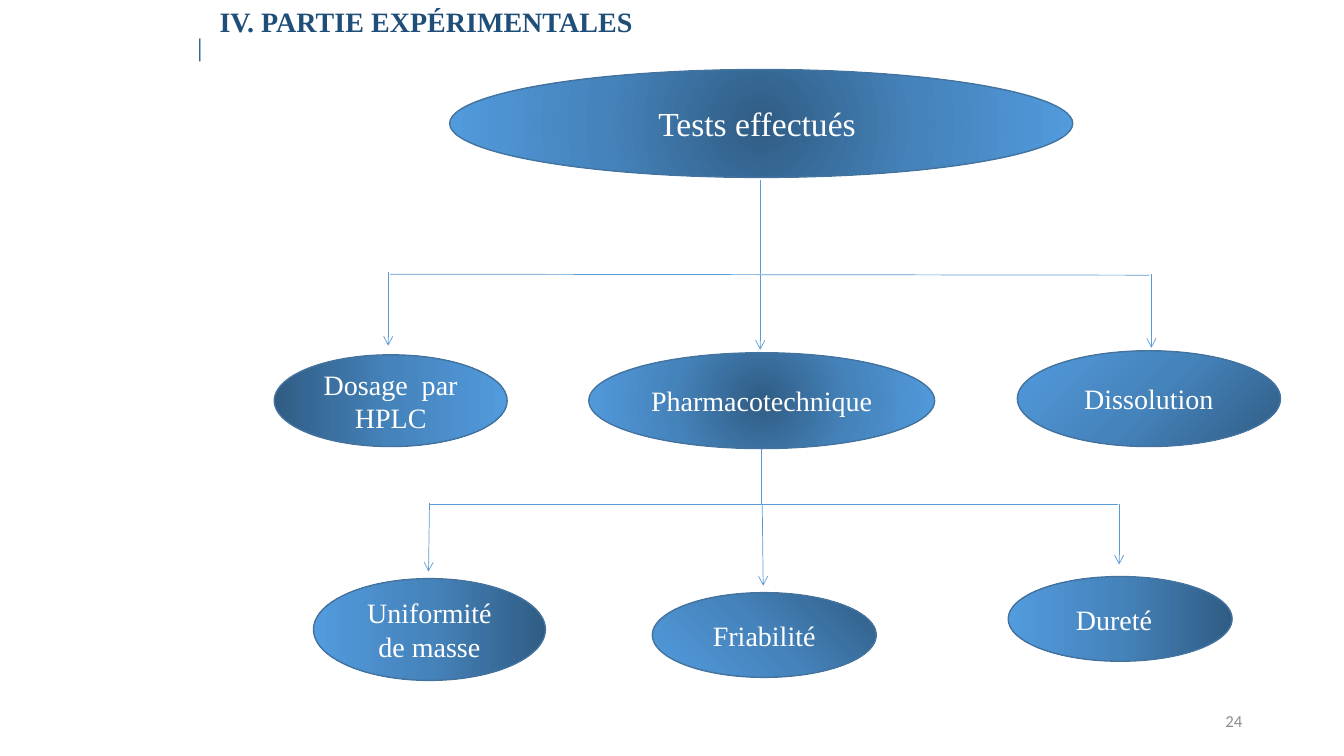
"""Build the tree of tests carried out in the experimental part."""
from pptx import Presentation
from pptx.dml.color import RGBColor
from pptx.enum.shapes import MSO_CONNECTOR, MSO_SHAPE
from pptx.enum.text import MSO_ANCHOR, PP_ALIGN
from pptx.oxml import parse_xml
from pptx.oxml.ns import nsdecls, qn
from pptx.util import Inches, Pt

OVAL = MSO_SHAPE.OVAL
STRAIGHT = MSO_CONNECTOR.STRAIGHT
MIDDLE = MSO_ANCHOR.MIDDLE
LEFT, CENTER, RIGHT = PP_ALIGN.LEFT, PP_ALIGN.CENTER, PP_ALIGN.RIGHT
NAVY = RGBColor(0x1F, 0x4E, 0x79)
GREY = RGBColor(0x8C, 0x8C, 0x8C)
WHITE = RGBColor(0xFF, 0xFF, 0xFF)
OUTLINE = RGBColor(0x43, 0x73, 0x9E)
BRANCH = RGBColor(0x5B, 0x9B, 0xD5)
SERIF = "Times New Roman"
STOPS = ((0, "305C84"), (50, "4583BB"), (100, "529BDE"))

FROM_LEFT = '<a:lin ang="0" scaled="0"/>'
FROM_RIGHT = '<a:lin ang="10800000" scaled="0"/>'
RADIAL = '<a:path path="circle"><a:fillToRect l="{}" t="{}" r="{}" b="{}"/></a:path>'
FROM_CENTER = RADIAL.format(50000, 50000, 50000, 50000)
FROM_BOTTOM_RIGHT = RADIAL.format(100000, 100000, 0, 0)
FROM_TOP_RIGHT = RADIAL.format(100000, 0, 0, 100000)


def write(shape, text, size, color, align, font=SERIF, bold=False):
    shape.text_frame.word_wrap = True
    para = shape.text_frame.paragraphs[0]
    para.text = text
    para.alignment = align
    para.font.name = font
    para.font.size = Pt(size)
    para.font.bold = bold
    para.font.color.rgb = color


def shade(shape, direction):
    shape.fill.gradient()
    stops = "".join(
        f'<a:gs pos="{position * 1000}"><a:srgbClr val="{color}"/></a:gs>'
        for position, color in STOPS
    )
    gradient = parse_xml(
        f'<a:gradFill {nsdecls("a")} rotWithShape="1">'
        f"<a:gsLst>{stops}</a:gsLst>{direction}</a:gradFill>"
    )
    properties = shape._element.spPr
    properties.replace(properties.find(qn("a:gradFill")), gradient)


deck = Presentation()
deck.slide_width = Inches(13.33)
deck.slide_height = Inches(7.5)
page = deck.slides.add_slide(deck.slide_layouts[6])

title = page.shapes.add_textbox(Inches(2.08), Inches(0), Inches(10.5), Inches(0.43))
write(title, "IV. PARTIE EXPÉRIMENTALES", 20, NAVY, LEFT, bold=True)

number = page.shapes.add_textbox(Inches(9.42), Inches(6.95), Inches(3), Inches(0.4))
number.text_frame.vertical_anchor = MIDDLE
write(number, "24", 12, GREY, RIGHT, font="Calibri")

bar = page.shapes.add_textbox(Inches(1.86), Inches(0.26), Inches(0.23), Inches(0.4))
write(bar, "|", 18, NAVY, LEFT)

tests = [
    ("Tests effectués", 24, 4.46, 0.69, 6.18, 1.07, FROM_CENTER, 0.18),
    ("Dosage  par HPLC", 20, 2.72, 3.52, 2.31, 0.91, FROM_LEFT, 0.1),
    ("Pharmacotechnique", 20, 5.84, 3.5, 3.43, 0.95, FROM_CENTER, 0.1),
    ("Dissolution", 20, 10.09, 3.48, 2.61, 0.95, FROM_BOTTOM_RIGHT, 0.1),
    ("Uniformité de masse", 20, 3.11, 5.74, 2.3, 1.01, FROM_RIGHT, 0.1),
    ("Friabilité", 20, 6.47, 5.88, 2.22, 0.84, FROM_TOP_RIGHT, 0.1),
    ("Dureté", 20, 10, 5.72, 2.22, 0.84, FROM_RIGHT, 0.22),
]
for name, size, left, top, width, height, direction, right_inset in tests:
    oval = page.shapes.add_shape(
        OVAL, Inches(left), Inches(top), Inches(width), Inches(height)
    )
    oval.shadow.inherit = False
    shade(oval, direction)
    oval.line.color.rgb = OUTLINE
    oval.line.width = Pt(1)
    oval.text_frame.vertical_anchor = MIDDLE
    oval.text_frame.margin_right = Inches(right_inset)
    write(oval, name, size, WHITE, CENTER)

branches = [
    (7.54, 1.79, 7.54, 2.72, False),
    (3.87, 2.72, 11.4, 2.73, False),
    (3.85, 2.7, 3.85, 3.43, True),
    (7.54, 2.73, 7.54, 3.47, True),
    (11.42, 2.72, 11.42, 3.45, True),
    (7.55, 4.45, 7.55, 5, False),
    (4.26, 5, 11.09, 5, False),
    (4.26, 4.99, 4.25, 5.67, True),
    (7.56, 5, 7.57, 5.81, True),
    (11.1, 5, 11.1, 5.6, True),
]
for start_x, start_y, end_x, end_y, has_arrow in branches:
    branch = page.shapes.add_connector(
        STRAIGHT, Inches(start_x), Inches(start_y), Inches(end_x), Inches(end_y)
    )
    branch.line.color.rgb = BRANCH
    branch.line.width = Pt(0.5)
    if has_arrow:
        arrow = parse_xml(f'<a:tailEnd {nsdecls("a")} type="arrow"/>')
        branch.line._get_or_add_ln().append(arrow)
    branch._element.spPr.append(parse_xml(f'<a:effectLst {nsdecls("a")}/>'))

deck.save("out.pptx")
